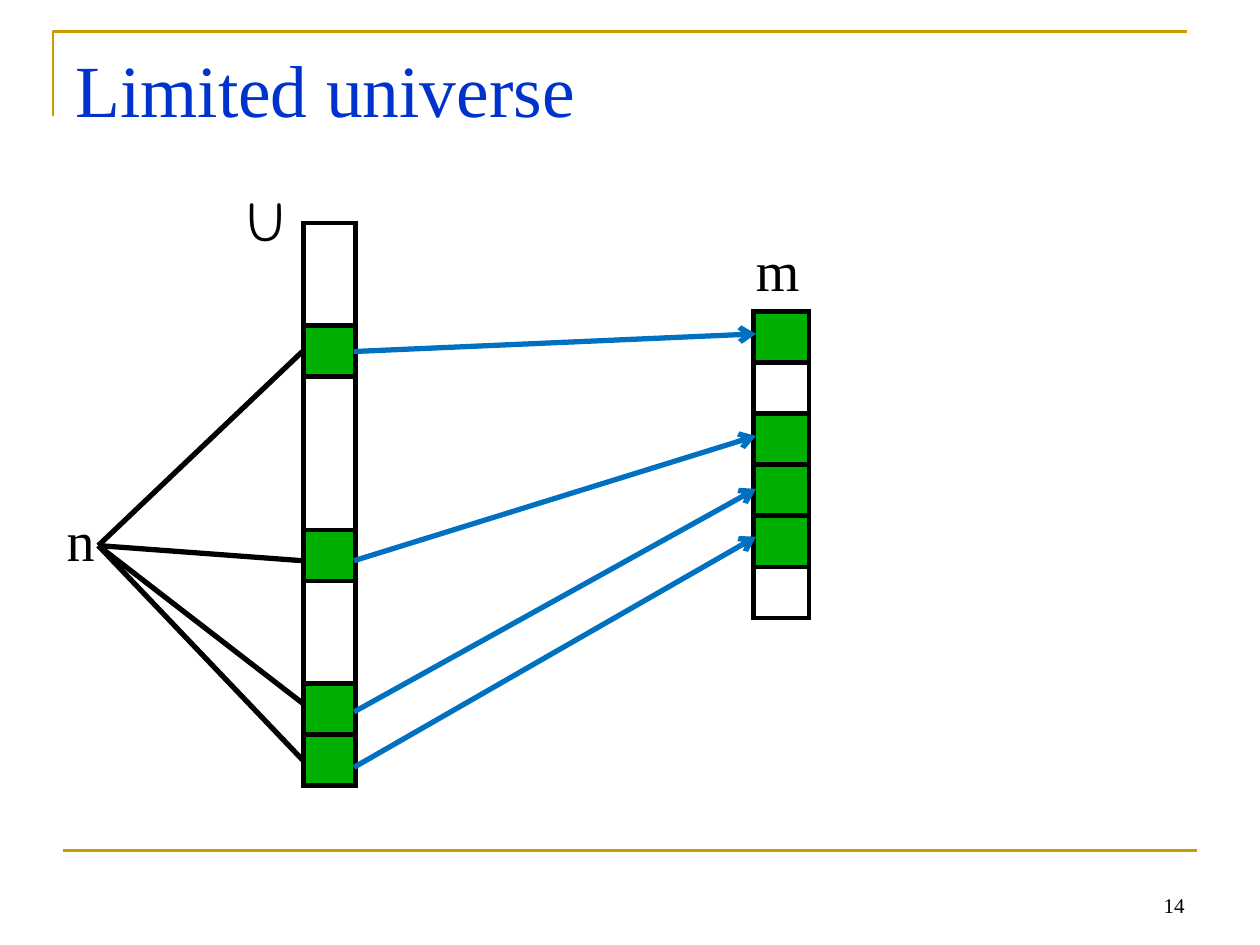
from lxml.etree import SubElement
from pptx import Presentation
from pptx.dml.color import RGBColor
from pptx.enum.shapes import MSO_CONNECTOR as CONNECTOR
from pptx.enum.text import MSO_ANCHOR as ANCHOR, PP_ALIGN as ALIGN
from pptx.oxml.ns import qn
from pptx.util import Inches, Pt

GOLD, BLACK, BLUE, GREEN, WHITE = "CC9900", "000000", "0070C0", "00B000", "FFFFFF"
ROW = 0.406
SERIF = "Times New Roman"


def color(hex_string):
    return RGBColor.from_string(hex_string)


def add_line(start, end, line_color, width, arrow=False):
    line = page.shapes.add_connector(
        CONNECTOR.STRAIGHT, *[Inches(value) for value in (*start, *end)])
    line.line.color.rgb = color(line_color)
    line.line.width = Pt(width)
    if arrow:
        SubElement(line.line._get_or_add_ln(), qn("a:tailEnd"), type="arrow")
    SubElement(line._element.spPr, qn("a:effectLst"))


deck = Presentation()
deck.slide_width, deck.slide_height = Inches(10), Inches(7.5)
page = deck.slides.add_slide(deck.slide_layouts[6])

# Gold frame
builder = page.shapes.build_freeform(Inches(0.42), Inches(0.92))
builder.add_line_segments(
    [(Inches(0.42), Inches(0.25)), (Inches(9.42), Inches(0.25))], close=False)
corner = builder.convert_to_shape()
corner.shadow.inherit = False
corner.fill.background()
corner.line.color.rgb = color(GOLD)
corner.line.width = Pt(1.5)
add_line((0.5, 6.75), (9.5, 6.75), GOLD, 1.5)

# Universe and hash table: left, top, width, then (rows tall, fill) per cell
universe = [(2, WHITE), (1, GREEN), (3, WHITE), (1, GREEN),
            (2, WHITE), (1, GREEN), (1, GREEN)]
slots = [(1, fill) for fill in (GREEN, WHITE, GREEN, GREEN, GREEN, WHITE)]
for left, top, width, cells in [(2.41, 1.77, 0.41, universe),
                                (5.98, 2.47, 0.44, slots)]:
    height = ROW * sum(units for units, _ in cells)
    table = page.shapes.add_table(len(cells), 1, Inches(left), Inches(top),
                                  Inches(width), Inches(height)).table
    for index, (units, fill) in enumerate(cells):
        table.rows[index].height = Inches(ROW * units)
        cell = table.cell(index, 0)
        cell.margin_top = cell.margin_bottom = 0
        properties = cell._tc.get_or_add_tcPr()
        for side in ("a:lnL", "a:lnR", "a:lnT", "a:lnB"):
            border = SubElement(properties, qn(side), w=str(Pt(3)))
            solid = SubElement(border, qn("a:solidFill"))
            SubElement(solid, qn("a:srgbClr"), val=BLACK)
        cell.fill.solid()
        cell.fill.fore_color.rgb = color(fill)

# Keys hashed from the universe into slots
for key_y, slot_y in [(4.45, 3.46), (5.65, 3.88), (6.09, 4.26), (2.79, 2.65)]:
    add_line((2.81, key_y), (6, slot_y), BLUE, 3, arrow=True)
for key_y in (4.45, 2.79, 5.58, 6.03):
    add_line((2.4, key_y), (0.78, 4.33), BLACK, 3)

# Text: wording, left, top, width, height, size, font, color
for text, left, top, width, height, size, font, text_color in [
        ("Limited universe", 0.5, 0.3, 9, 1.25, 42, SERIF, "0033CC"),
        ("14", 7.17, 6.83, 2.33, 0.5, 12, SERIF, BLACK),
        ("m", 5.9, 1.82, 0.58, 0.64, 32, SERIF, BLACK),
        ("U", 1.86, 1.42, 0.48, 0.64, 32, "Comic Neue", BLACK),
        ("n", 0.43, 3.96, 0.45, 0.64, 32, SERIF, BLACK)]:
    box = page.shapes.add_textbox(Inches(left), Inches(top), Inches(width), Inches(height))
    frame = box.text_frame
    frame.text = text
    frame.word_wrap = len(text) > 1
    para = frame.paragraphs[0]
    if text == "14":
        frame.vertical_anchor = ANCHOR.BOTTOM
        para.alignment = ALIGN.RIGHT
    span = para.runs[0]
    span.font.size = Pt(size)
    span.font.name = font
    span.font.color.rgb = color(text_color)

deck.save("out.pptx")
